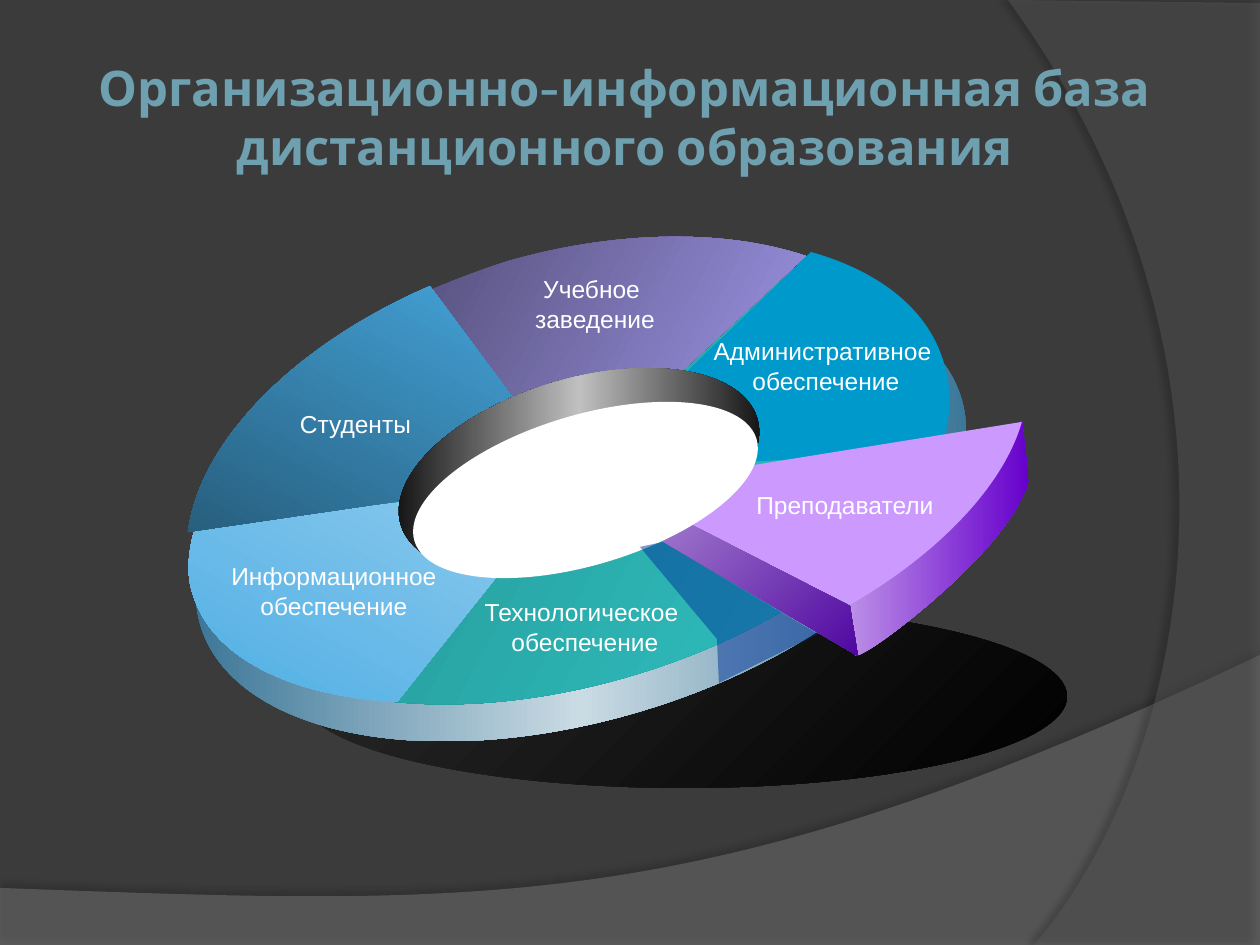
import math

from lxml import etree
from pptx import Presentation
from pptx import util as u
from pptx.dml.color import RGBColor
from pptx.enum import shapes, text
from pptx.oxml import ns

PX = 914400 // 126
TILT = -16.6

BACKGROUND = RGBColor(0x3B, 0x3B, 0x3B)
LOW_WAVE = RGBColor(0x7F, 0x7F, 0x7F)
SIDE_WAVE = RGBColor(0x5E, 0x5E, 0x5E)
HEADING = RGBColor(0x6E, 0xA0, 0xB0)
WHITE = RGBColor(0xFF, 0xFF, 0xFF)
BLACK = RGBColor(0, 0, 0)
CHARCOAL = RGBColor(0x29, 0x29, 0x29)
STEEL = RGBColor(0x29, 0x69, 0x8D)
PALE = RGBColor(0xCA, 0xDB, 0xE4)
SILVER = RGBColor(0xC0, 0xC0, 0xC0)
TEAL = RGBColor(0x21, 0x85, 0x85)
AQUA = RGBColor(0x33, 0xCC, 0xCC)
BLUE = RGBColor(0, 0x99, 0xCC)
ICE = RGBColor(0x9F, 0xD2, 0xF0)
SKY = RGBColor(0x47, 0xAB, 0xE3)
DEEP_SKY = RGBColor(0x22, 0x52, 0x6D)
PLUM = RGBColor(0x52, 0x4D, 0x77)
LAVENDER = RGBColor(0xAA, 0xA0, 0xF8)
LILAC = RGBColor(0xCC, 0x99, 0xFF)
MIST = RGBColor(0xBB, 0x8F, 0xE6)
VIOLET = RGBColor(0x66, 0, 0xCC)
HAZE = RGBColor(0xB2, 0x93, 0xD6)
INDIGO = RGBColor(0x50, 0x07, 0xA1)
NAVY = RGBColor(0, 0x33, 0x99)

TITLE = "Организационно-информационная база дистанционного образования"

# Outline items: two numbers are a corner, six are a curve.
WAVES = [
    ([(0, 888), (0, 946), (1260, 946), (1260, 655), (704, 919, 493, 906, 0, 888)],
     dict(colors=[LOW_WAVE], alpha=45), dict(alpha=35, distance=3.5, angle=270)),
    ([(1260, 3), (1260, 945), (1034, 945), (1178, 780, 1283, 378, 1008, 0)],
     dict(colors=[SIDE_WAVE], alpha=40), dict(alpha=45, distance=4, angle=180)),
]

RING = [
    ("ellipse", (301, 605, 766, 183), 0, dict(colors=[CHARCOAL, BLACK], angle=45)),
    ("ellipse", (184, 304, 794, 416), TILT, dict(colors=[STEEL, PALE, STEEL], angle=-TILT)),
    ("ellipse", (192, 281, 766, 403), TILT, dict(colors=[TEAL, AQUA], angle=45)),
    ("outline", [(811, 252), (882, 272, 929, 311, 944, 363),
                 (953, 391, 951, 421, 940, 452), (585, 470)], TILT, dict(colors=[BLUE])),
    ("outline", [(195, 528), (188, 552, 186, 575, 193, 595),
                 (212, 656, 287, 696, 397, 702), (573, 481)], TILT,
     dict(colors=[ICE, SKY], angle=135)),
    ("outline", [(426, 292), (451, 281, 478, 271, 505, 262),
                 (612, 231, 722, 228, 806, 256), (570, 476)], TILT,
     dict(colors=[PLUM, LAVENDER], angle=45)),
    ("outline", [(430, 286), (294, 345, 200, 441, 188, 532), (571, 476)], TILT,
     dict(colors=[SKY, DEEP_SKY], angle=135)),
    ("ellipse", (393, 379, 372, 185), TILT, dict(colors=[BLACK, SILVER, BLACK], angle=-TILT)),
    ("label", (471, 268, 248, 72), ["Учебное ", "заведение"], dict(wrap=True)),
    ("label", (217, 555, 234, 72), ["Информационное обеспечение"], dict(wrap=True)),
    ("label", (699, 330, 247, 72), ["Административное", " обеспечение"], dict(wrap=True)),
    ("outline", [(850, 605), (1022, 421), (1029, 481), (1021, 507, 998, 538, 969, 567),
                 (941, 596, 876, 650, 856, 656), (852, 640, 850, 605, 850, 605)], 0,
     dict(colors=[MIST, VIOLET])),
    ("outline", [(1022, 422), (1004, 485, 940, 553, 850, 605), (611, 488)], -17.7,
     dict(colors=[LILAC])),
    ("outline", [(850, 606), (858, 656), (631, 523), (616, 486)], 0,
     dict(colors=[HAZE, INDIGO], angle=45)),
    ("label", (743, 484, 204, 43), ["Преподаватели"], dict(wrap=False)),
    ("label", (287, 403, 137, 43), ["Студенты"], dict(wrap=False)),
    ("label", (471, 591, 228, 72), ["Технологическое ", "обеспечение"], dict(wrap=True)),
    ("ellipse", (407, 415, 357, 150), TILT, dict(colors=[WHITE])),
    ("outline", [(640, 547), (717, 639), (719, 683), (818, 634), (663, 542)], 0,
     dict(colors=[NAVY], alpha=49)),
]


def emu(lengths):
    return [length * PX for length in lengths]


def child(parent, tag, **attributes):
    return etree.SubElement(parent, ns.qn(tag), {k: str(v) for k, v in attributes.items()})


def paint(shape, colors, angle=0, alpha=100):
    shape.shadow.inherit = False
    shape.line.fill.background()
    shape.fill.solid()
    shape.fill.fore_color.rgb = colors[0]
    solid = shape._element.spPr.find(ns.qn("a:solidFill"))
    if alpha < 100:
        child(solid[0], "a:alpha", val=alpha * 1000)
    if len(colors) > 1:
        gradient = etree.Element(ns.qn("a:gradFill"), rotWithShape="1")
        stops = child(gradient, "a:gsLst")
        for index, color in enumerate(colors):
            stop = child(stops, "a:gs", pos=index * 100000 // (len(colors) - 1))
            child(stop, "a:srgbClr", val=color)
        child(gradient, "a:lin", ang=round(angle * 60000), scaled=0)
        solid.getparent().replace(solid, gradient)


def cast_shadow(shape, alpha, distance, angle):
    effects = shape._element.spPr.find(ns.qn("a:effectLst"))
    shadow = child(effects, "a:outerShdw", blurRad=u.Pt(4), dist=u.Pt(distance),
                   dir=angle * 60000, algn="ctr", rotWithShape=0)
    child(child(shadow, "a:srgbClr", val=BLACK), "a:alpha", val=alpha * 1000)


def turn(point, degrees):
    cosine, sine = math.cos(math.radians(degrees)), math.sin(math.radians(degrees))
    return point[0] * cosine - point[1] * sine, point[0] * sine + point[1] * cosine


def add_outline(page, outline, rotation=0):
    pieces = [[turn(item[i:i + 2], -rotation) for i in range(0, len(item), 2)]
              for item in outline]
    ends = [piece[-1] for piece in pieces]
    builder = page.shapes.build_freeform(*ends[0], scale=PX)
    builder.add_line_segments(ends[1:], close=True)
    shape = builder.convert_to_shape()
    left, top = shape.left, shape.top
    segments = list(shape._element.spPr.iter(ns.qn("a:lnTo")))
    for piece, segment in zip(pieces[1:], segments):
        if len(piece) == 3:
            curve = etree.Element(ns.qn("a:cubicBezTo"))
            for x, y in piece:
                child(curve, "a:pt", x=round(x * PX - left), y=round(y * PX - top))
            path = segment.getparent()
            path.replace(segment, curve)
    path = next(shape._element.spPr.iter(ns.qn("a:path")))
    path.set("w", str(shape.width))
    path.set("h", str(shape.height))
    for point in path.iter(ns.qn("a:pt")):
        if point.getparent().tag != ns.qn("a:cubicBezTo"):
            x, y = ends.pop(0)
            point.set("x", str(round(x * PX - left)))
            point.set("y", str(round(y * PX - top)))
        else:
            if point is point.getparent()[-1]:
                ends.pop(0)
    center = turn((left + shape.width / 2, top + shape.height / 2), rotation)
    shape.left = round(center[0] - shape.width / 2)
    shape.top = round(center[1] - shape.height / 2)
    shape.rotation = rotation
    return shape


def add_ellipse(page, place, rotation):
    shape = page.shapes.add_shape(shapes.MSO_SHAPE.OVAL, *emu(place))
    shape.rotation = rotation
    return shape


def write(frame, lines, size=14, font="Arial", color=WHITE, bold=False, wrap=True):
    frame.word_wrap = wrap
    for index, line in enumerate(lines):
        para = frame.add_paragraph() if index else frame.paragraphs[0]
        para.alignment = text.PP_ALIGN.CENTER
        span = para.add_run()
        span.text = line
        span.font.size = u.Pt(size)
        span.font.name = font
        span.font.bold = bold
        span.font.color.rgb = color


def main():
    deck = Presentation()
    deck.slide_width, deck.slide_height = emu((1260, 945))
    page = deck.slides.add_slide(deck.slide_layouts[5])
    page.background.fill.solid()
    page.background.fill.fore_color.rgb = BACKGROUND

    for outline, fill, shadow in WAVES:
        wave = add_outline(page, outline)
        paint(wave, **fill)
        cast_shadow(wave, **shadow)

    title = page.shapes.title
    page.shapes._spTree.append(title._element)
    title.left, title.top, title.width, title.height = emu((63, 38, 1123, 157))
    frame = title.text_frame
    frame.margin_left = frame.margin_right = frame.margin_top = frame.margin_bottom = u.Inches(0.05)
    frame.vertical_anchor = text.MSO_ANCHOR.MIDDLE
    frame.auto_size = text.MSO_AUTO_SIZE.NONE
    write(frame, [TITLE], size=28, font="Cabin", color=HEADING, bold=True)

    makers = {"ellipse": add_ellipse, "outline": add_outline}
    for kind, place, detail, style in RING:
        if kind == "label":
            box = page.shapes.add_textbox(*emu(place))
            box.text_frame.auto_size = text.MSO_AUTO_SIZE.SHAPE_TO_FIT_TEXT
            write(box.text_frame, detail, **style)
        else:
            paint(makers[kind](page, place, detail), **style)

    deck.save("out.pptx")


if __name__ == "__main__":
    main()
